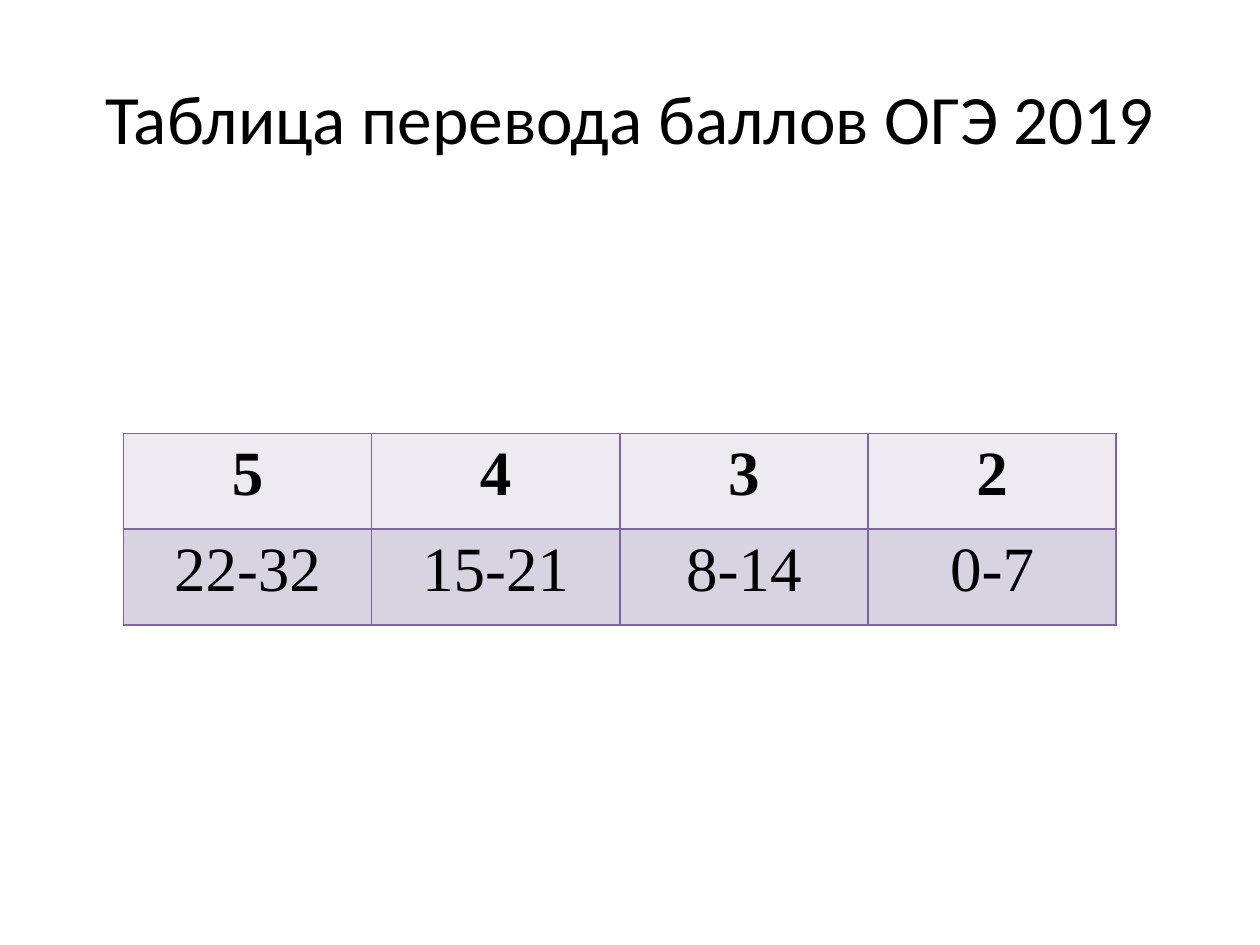
from dataclasses import dataclass

from lxml.etree import SubElement
from pptx import Presentation
from pptx.dml.color import RGBColor
from pptx.enum.text import MSO_ANCHOR, MSO_AUTO_SIZE, PP_ALIGN
from pptx.oxml.ns import qn
from pptx.slide import Slide
from pptx.table import _Cell
from pptx.util import Inches, Pt


@dataclass(frozen=True)
class Theme:
    """Colours, fonts and type sizes of the slide."""

    paper: str = "FFFFFF"
    ink: str = "000000"
    grade_fill: str = "EDEAF0"
    score_fill: str = "D8D3E0"
    border: str = "8064A2"
    border_width: float = 1
    title_font: str = "Calibri"
    table_font: str = "Times New Roman"
    title_size: float = 39.6
    table_size: float = 36


@dataclass(frozen=True)
class ScoreRow:
    """One row of the conversion table."""

    entries: tuple[str, ...]
    fill: str
    bold: bool


THEME = Theme()
ROWS = (
    ScoreRow(("5", "4", "3", "2"), THEME.grade_fill, True),
    ScoreRow(("22-32", "15-21", "8-14", "0-7"), THEME.score_fill, False),
)
COLUMN_WIDTH = 1.97
ROW_HEIGHT = 0.76


def add_text(frame, text: str, font_name: str, size: float, bold: bool = False) -> None:
    """Write one centred run into a text frame."""
    paragraph = frame.paragraphs[0]
    paragraph.alignment = PP_ALIGN.CENTER
    run = paragraph.add_run()
    run.text = text
    run.font.name = font_name
    run.font.size = Pt(size)
    run.font.bold = bold
    run.font.color.rgb = RGBColor.from_string(THEME.ink)


def add_borders(cell: _Cell) -> None:
    """Draw the four borders of a cell."""
    properties = cell._tc.get_or_add_tcPr()
    for side in ("a:lnL", "a:lnR", "a:lnT", "a:lnB"):
        border = SubElement(properties, qn(side), w=str(Pt(THEME.border_width)))
        solid = SubElement(border, qn("a:solidFill"))
        SubElement(solid, qn("a:srgbClr"), val=THEME.border)


def add_title(slide: Slide, text: str) -> None:
    """Place and fill the slide title."""
    title = slide.shapes.title
    title.left, title.top = Inches(0.5), Inches(0.3)
    title.width, title.height = Inches(9), Inches(1.25)
    title.fill.solid()
    title.fill.fore_color.rgb = RGBColor.from_string(THEME.paper)
    title.text_frame.word_wrap = True
    title.text_frame.auto_size = MSO_AUTO_SIZE.NONE
    title.text_frame.vertical_anchor = MSO_ANCHOR.MIDDLE
    add_text(title.text_frame, text, THEME.title_font, THEME.title_size)


def add_score_table(slide: Slide, rows: tuple[ScoreRow, ...]) -> None:
    """Draw the table that converts scores to grades."""
    column_count = len(rows[0].entries)
    table = slide.shapes.add_table(
        len(rows), column_count, Inches(0.98), Inches(3.44),
        Inches(COLUMN_WIDTH * column_count), Inches(ROW_HEIGHT * len(rows)),
    ).table
    table.first_row = table.horz_banding = False
    for row_index, row in enumerate(rows):
        for column_index, entry in enumerate(row.entries):
            cell = table.cell(row_index, column_index)
            add_borders(cell)
            cell.fill.solid()
            cell.fill.fore_color.rgb = RGBColor.from_string(row.fill)
            add_text(cell.text_frame, entry, THEME.table_font, THEME.table_size, row.bold)


def main() -> None:
    """Build and save the presentation."""
    presentation = Presentation()
    presentation.slide_width, presentation.slide_height = Inches(10), Inches(7.5)
    slide = presentation.slides.add_slide(presentation.slide_layouts[5])
    add_title(slide, "Таблица перевода баллов ОГЭ 2019")
    add_score_table(slide, ROWS)
    presentation.save("out.pptx")


if __name__ == "__main__":
    main()
